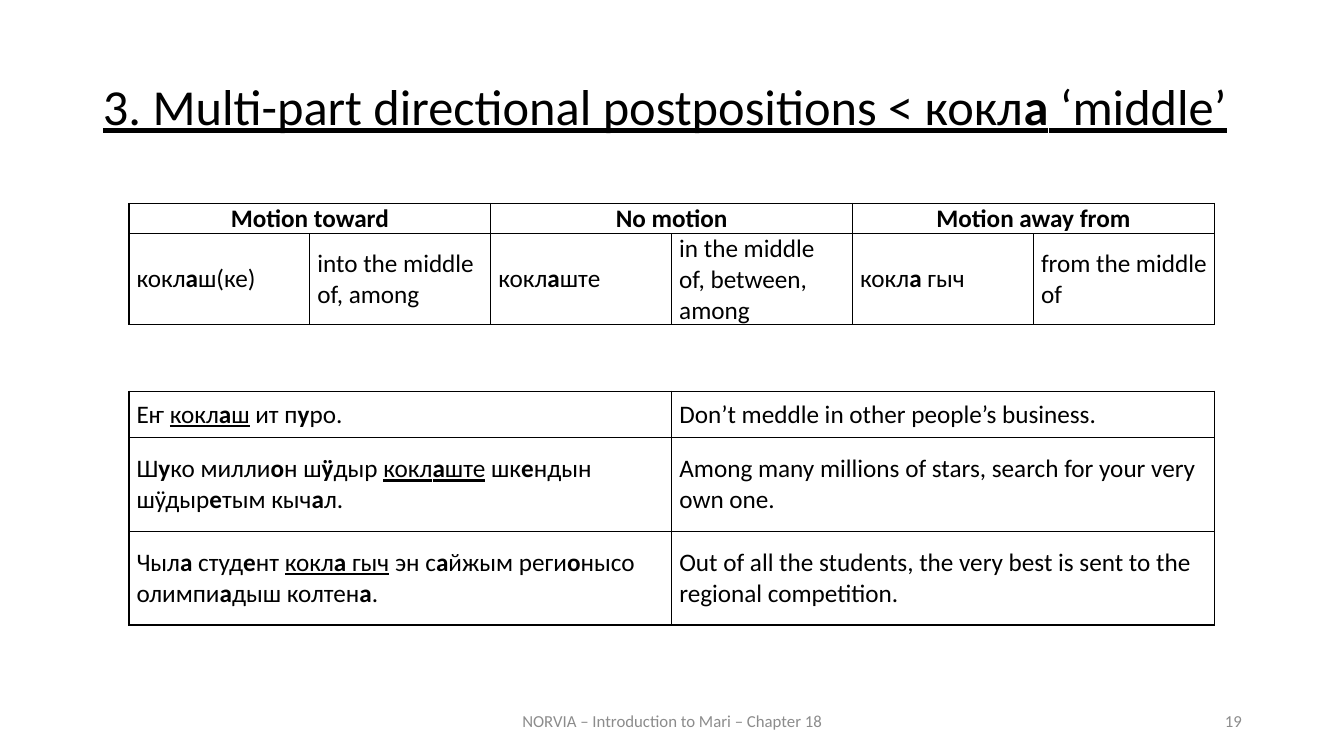
from dataclasses import dataclass

from lxml.etree import SubElement
from pptx import Presentation
from pptx.dml.color import RGBColor
from pptx.enum.text import MSO_ANCHOR as Anchor, MSO_AUTO_SIZE as Fit, PP_ALIGN as Align
from pptx.oxml.ns import qn
from pptx.util import Cm, Pt

BLACK, GRAY = "000000", "8C8C8C"


@dataclass
class Note:
    text: str
    left: float
    width: float
    align: Align


@dataclass
class Grid:
    top: float
    cols: int
    heights: list[float]
    rows: list[list[str]]
    head: bool = False


LEFT, WIDTH = 3.25, 27.36
TITLE = "_3. Multi-part directional postpositions < кокл*а* ‘middle’_"
NOTES = [
    Note("NORVIA – Introduction to Mari – Chapter 18", 11.23, 11.43, Align.CENTER),
    Note("19", 23.93, 7.62, Align.RIGHT),
]
GRIDS = [
    Grid(5.13, 6, [0.53, 1.04], [
        ["*Motion toward*", "", "*No motion*", "", "*Motion away from*", ""],
        ["кокл*а*ш(ке)", "into the middle of, among",
         "кокл*а*ште", "in the middle of, between, among",
         "кокл*а* гыч", "from the middle of"],
    ], head=True),
    Grid(9.86, 2, [1.17, 2.36, 2.36], [
        ["Еҥ _кокл*а*ш_ ит п*у*ро.", "Don’t meddle in other people’s business."],
        ["Ш*у*ко милли*о*н ш*ӱ*дыр _кокл*а*ште_ шк*е*ндын шӱдыр*е*тым кыч*а*л.",
         "Among many millions of stars, search for your very own one."],
        ["Чыл*а* студ*е*нт _кокл*а* гыч_ эн с*а*йжым реги*о*нысо олимпи*а*дыш колтен*а*.",
         "Out of all the students, the very best is sent to the regional competition."],
    ]),
]


def color(code: str) -> RGBColor:
    return RGBColor.from_string(code)


def style(item, **values) -> None:
    for name, value in values.items():
        setattr(item, name, value)


def write(para, text: str, size: float, tint: str = BLACK) -> None:
    for i, part in enumerate(text.split("_")):
        for j, bit in enumerate(part.split("*")):
            if bit:
                run = para.add_run()
                run.text = bit
                style(run.font, name="Calibri", size=Pt(size),
                      bold=j % 2 == 1, underline=i % 2 == 1)
                run.font.color.rgb = color(tint)


def border(cell) -> None:
    props = cell._tc.get_or_add_tcPr()
    for side in ("lnL", "lnR", "lnT", "lnB"):
        line = SubElement(props, qn(f"a:{side}"), w=str(Pt(1)))
        fill = SubElement(line, qn("a:solidFill"))
        SubElement(fill, qn("a:srgbClr"), val=BLACK)


def draw_title(slide) -> None:
    title = slide.shapes.title
    style(title, left=Cm(2.34), top=Cm(1.93), width=Cm(29.21), height=Cm(2.51))
    frame = title.text_frame
    style(frame, auto_size=Fit.NONE, vertical_anchor=Anchor.TOP, word_wrap=True)
    para = frame.paragraphs[0]
    style(para, alignment=Align.JUSTIFY, line_spacing=0.9, space_before=Pt(12))
    write(para, TITLE, 36)


def draw_note(slide, note: Note) -> None:
    box = slide.shapes.add_textbox(Cm(note.left), Cm(17.65), Cm(note.width), Cm(1.02))
    style(box.text_frame, word_wrap=True, vertical_anchor=Anchor.MIDDLE)
    para = box.text_frame.paragraphs[0]
    para.alignment = note.align
    write(para, note.text, 12, GRAY)


def draw_grid(slide, grid: Grid) -> None:
    table = slide.shapes.add_table(
        len(grid.rows), grid.cols, Cm(LEFT), Cm(grid.top),
        Cm(WIDTH), Cm(sum(grid.heights))).table
    style(table, first_row=False, horz_banding=False)
    for col in table.columns:
        col.width = Cm(WIDTH / grid.cols)
    for r, (row, height) in enumerate(zip(grid.rows, grid.heights)):
        table.rows[r].height = Cm(height)
        head = grid.head and r == 0
        for c, text in enumerate(row):
            cell = table.cell(r, c)
            style(cell, margin_left=Cm(0.19), margin_right=Cm(0.19),
                  margin_top=0, margin_bottom=0,
                  vertical_anchor=Anchor.TOP if head else Anchor.MIDDLE)
            border(cell)
            cell.fill.background()
            para = cell.text_frame.paragraphs[0]
            style(para, alignment=Align.CENTER if head else Align.LEFT)
            para.font.size = Pt(18)
            write(para, text, 18)
            if head and c % 2 == 0:
                cell.merge(table.cell(r, c + 1))


def main() -> None:
    deck = Presentation()
    style(deck, slide_width=Cm(33.87), slide_height=Cm(19.05))
    slide = deck.slides.add_slide(deck.slide_layouts[5])
    draw_title(slide)
    for note in NOTES:
        draw_note(slide, note)
    for grid in GRIDS:
        draw_grid(slide, grid)
    deck.save("out.pptx")


if __name__ == "__main__":
    main()
